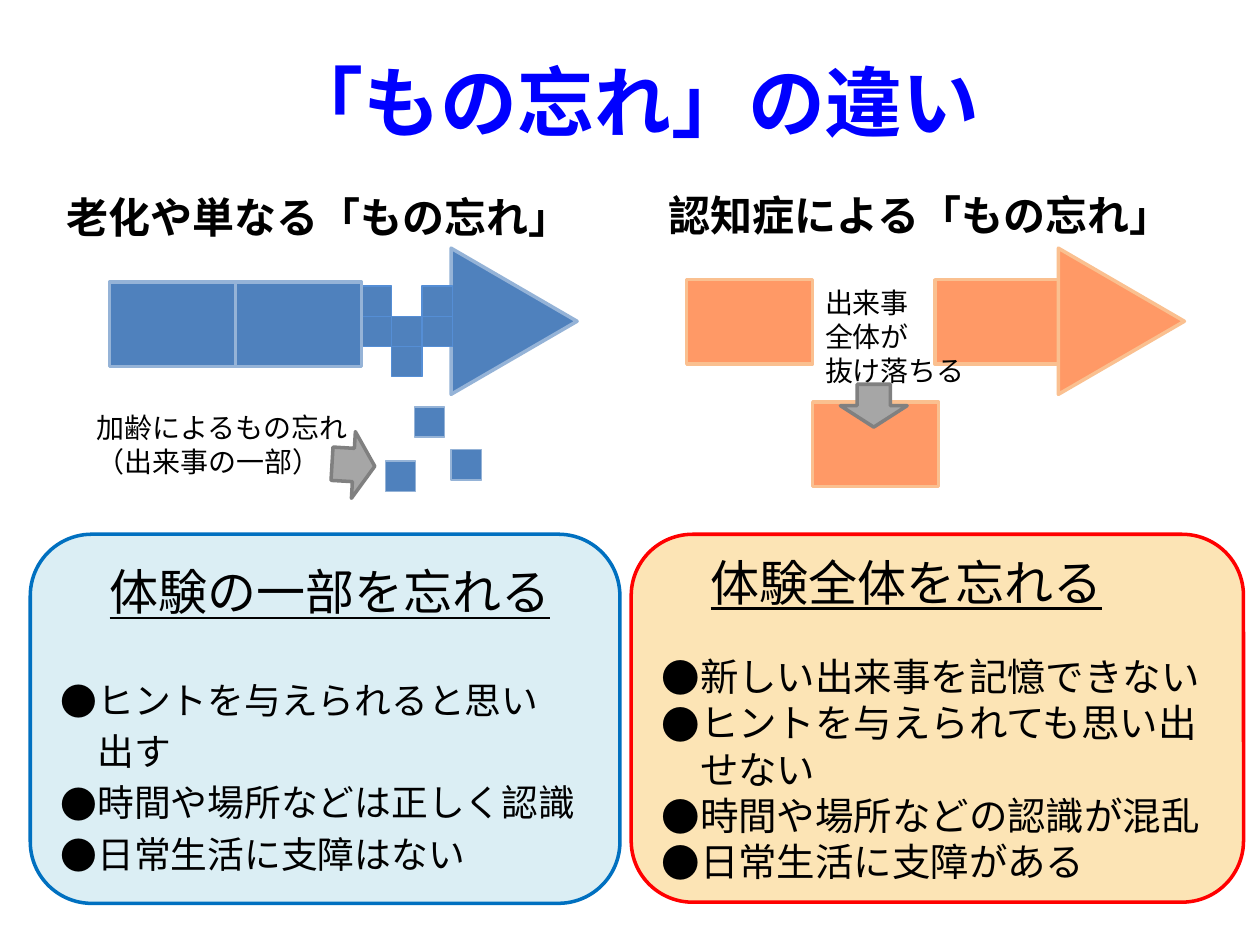
"""Build a slide comparing ordinary forgetfulness with dementia."""
from lxml import etree
from pptx import Presentation
from pptx.dml.color import RGBColor
from pptx.enum import shapes, text
from pptx.oxml import ns
from pptx.util import Inches, Pt

BLACK = RGBColor(0x00, 0x00, 0x00)
TITLE_BLUE = RGBColor(0x00, 0x00, 0xFF)
ORANGE = RGBColor(0xFF, 0x99, 0x66)
ORANGE_EDGE = RGBColor(0xFA, 0xC0, 0x90)
BLUE = RGBColor(0x4F, 0x81, 0xBD)
BLUE_EDGE = RGBColor(0x95, 0xB3, 0xD7)
TILE_EDGE = RGBColor(0x55, 0x8E, 0xD5)
GRAY = RGBColor(0xA6, 0xA6, 0xA6)
GRAY_EDGE = RGBColor(0x80, 0x80, 0x80)
PALE_BLUE = RGBColor(0xDB, 0xEE, 0xF4)
PANEL_BLUE = RGBColor(0x00, 0x70, 0xC0)
PALE_ORANGE = RGBColor(0xFC, 0xE4, 0xB5)
RED = RGBColor(0xFF, 0x00, 0x00)

KIND = shapes.MSO_SHAPE
ANCHOR = text.MSO_ANCHOR
ALIGN = text.PP_ALIGN
TILE = 0.24


def add_block(kind, box, fill, edge, width=2, rotation=0):
    shape = slide.shapes.add_shape(kind, *map(Inches, box))
    shape.shadow.inherit = False
    shape.fill.solid()
    shape.fill.fore_color.rgb = fill
    shape.line.color.rgb = edge
    shape.line.width = Pt(width)
    shape.rotation = rotation
    return shape


def format_paragraph(paragraph, size, color=BLACK, bold=False, font="Arial"):
    for run in paragraph.runs:
        run.font.size = Pt(size)
        run.font.bold = bold
        run.font.color.rgb = color
        run.font.name = font
        east_asian = etree.SubElement(run.font._element, ns.qn("a:ea"))
        east_asian.set("typeface", font)


presentation = Presentation()
presentation.slide_width = Inches(10)
presentation.slide_height = Inches(7.5)
slide = presentation.slides.add_slide(presentation.slide_layouts[6])

for kind, box, fill, edge, rotation in [
    (KIND.RECTANGLE, (7.42, 2.22, 1, 0.67), ORANGE, ORANGE_EDGE, 0),
    (KIND.ISOSCELES_TRIANGLE, (8.32, 2.05, 1.16, 1), ORANGE, ORANGE_EDGE, 90),
    (KIND.RECTANGLE, (6.45, 3.19, 1, 0.67), ORANGE, ORANGE_EDGE, 0),
    (KIND.RECTANGLE, (5.45, 2.22, 1, 0.67), ORANGE, ORANGE_EDGE, 0),
    (KIND.ISOSCELES_TRIANGLE, (3.5, 2.05, 1.16, 1), BLUE, BLUE_EDGE, 90),
]:
    add_block(kind, box, fill, edge, rotation=rotation)

for column, row in [(1, 2), (0, 0), (0, 1), (1, 1), (2, 1), (2, 0)]:
    box = (2.87 + column * TILE, 2.27 + row * TILE, TILE, TILE)
    add_block(KIND.RECTANGLE, box, BLUE, TILE_EDGE, 0.75)

for left in (1.87, 0.87):
    add_block(KIND.RECTANGLE, (left, 2.24, 1, 0.67), BLUE, BLUE_EDGE)

for left, top in [(3.58, 3.57), (3.06, 3.66), (3.29, 3.23)]:
    add_block(KIND.RECTANGLE, (left, top, TILE, TILE), BLUE, BLUE_EDGE, 0.75)

for box, fill, edge, size, gap, heading, lines in [
    ((0.24, 4.24, 4.68, 2.93), PALE_BLUE, PANEL_BLUE, 21, 4.2, "体験の一部を忘れる",
     ["●ヒントを与えられると思い", "出す", "●時間や場所などは正しく認識",
      "●日常生活に支障はない"]),
    ((5.01, 4.24, 4.86, 2.92), PALE_ORANGE, RED, 22, 0, "体験全体を忘れる",
     ["●新しい出来事を記憶できない", "●ヒントを与えられても思い出", "せない",
      "●時間や場所などの認識が混乱", "●日常生活に支障がある"]),
]:
    panel = add_block(KIND.ROUNDED_RECTANGLE, box, fill, edge)
    frame = panel.text_frame
    frame.word_wrap = True
    frame.vertical_anchor = ANCHOR.MIDDLE
    frame.text = "\n".join([heading] + [line.lstrip("●") for line in lines])
    title, *items = frame.paragraphs
    title.alignment = ALIGN.LEFT
    title._p.get_or_add_pPr().set("marL", str(Pt(28)))
    format_paragraph(title, 28, font="Noto Sans CJK JP")
    title.runs[0].font.underline = True
    for paragraph, line in zip(items, lines):
        paragraph.alignment = ALIGN.LEFT
        paragraph.space_before = Pt(gap)
        format_paragraph(paragraph, size)
        properties = paragraph._p.get_or_add_pPr()
        properties.set("marL", str(Pt(size)))
        if line.startswith("●"):
            properties.set("indent", str(-Pt(size)))
            bullet_font = etree.SubElement(properties, ns.qn("a:buFont"))
            bullet_font.set("typeface", "Noto Sans CJK JP")
            etree.SubElement(properties, ns.qn("a:buChar")).set("char", "●")
    items[0].space_before = Pt(24 + 2 * gap)

for box, content, size, color, bold, anchor, alignment in [
    ((0.53, 0.29, 9, 1.02), "「もの忘れ」の違い", 44, TITLE_BLUE, True,
     ANCHOR.MIDDLE, ALIGN.CENTER),
    ((0.43, 1.27, 4.42, 0.7), "老化や単なる「もの忘れ」", 24, BLACK, True,
     ANCHOR.BOTTOM, ALIGN.LEFT),
    ((5.21, 1.25, 4.42, 0.7), "認知症による「もの忘れ」", 24, BLACK, True,
     ANCHOR.BOTTOM, ALIGN.LEFT),
    ((6.45, 2.22, 1.5, 0.91), "出来事\n全体が\n抜け落ちる", 16, BLACK, False,
     ANCHOR.TOP, ALIGN.LEFT),
    ((0.67, 3.21, 2.3, 0.64), "加齢によるもの忘れ\n（出来事の一部）", 16, BLACK, False,
     ANCHOR.TOP, ALIGN.LEFT),
]:
    frame = slide.shapes.add_textbox(*map(Inches, box)).text_frame
    frame.word_wrap = True
    frame.vertical_anchor = anchor
    frame.text = content
    for paragraph in frame.paragraphs:
        paragraph.alignment = alignment
        format_paragraph(paragraph, size, color, bold)

for left, top, rotation in [(6.67, 3.05, 0), (2.54, 3.52, 273.4)]:
    add_block(KIND.DOWN_ARROW, (left, top, 0.53, 0.34), GRAY, GRAY_EDGE,
              rotation=rotation)

presentation.save("out.pptx")
